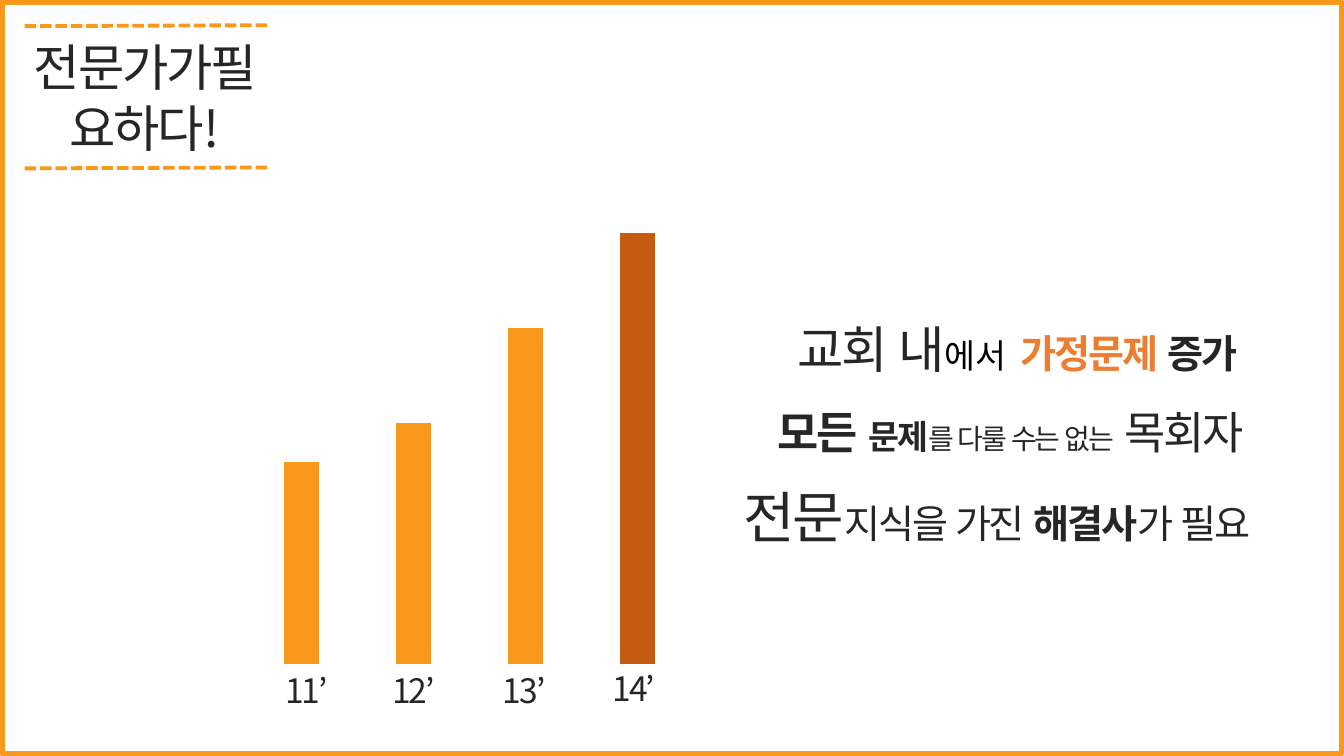
from lxml import etree
from pptx import Presentation
from pptx.chart.data import CategoryChartData
from pptx.dml.color import RGBColor
from pptx.enum.chart import XL_CHART_TYPE
from pptx.enum.dml import MSO_LINE
from pptx.enum.lang import MSO_LANGUAGE_ID
from pptx.enum.shapes import MSO_CONNECTOR, MSO_SHAPE
from pptx.enum.text import MSO_ANCHOR, MSO_AUTO_SIZE, PP_ALIGN
from pptx.oxml import parse_xml
from pptx.oxml.ns import qn
from pptx.util import Pt

COLUMNS = XL_CHART_TYPE.COLUMN_CLUSTERED
DASH = MSO_LINE.SQUARE_DOT
KOREAN = MSO_LANGUAGE_ID.KOREAN
STRAIGHT = MSO_CONNECTOR.STRAIGHT
RECTANGLE = MSO_SHAPE.RECTANGLE
TOP = MSO_ANCHOR.TOP
GROW = MSO_AUTO_SIZE.SHAPE_TO_FIT_TEXT
CENTER = PP_ALIGN.CENTER

FONT = "Noto Sans CJK KR"
COLORS = {
    "orange": "F8981D",
    "rust": "C55A11",
    "accent": "ED7D31",
    "ink": "262626",
    "black": "000000",
}


def color(name):
    return RGBColor.from_string(COLORS[name])


def write_centered(box, spans):
    """Fill box with one centred line of (text, size, bold, colour, spacing) spans."""
    frame = box.text_frame
    frame.word_wrap = True
    frame.auto_size = GROW
    frame.vertical_anchor = TOP
    para = frame.paragraphs[0]
    para.alignment = CENTER
    para.line_spacing = 1.0
    for text, size, bold, ink, spacing in spans:
        span = para.add_run()
        span.text = text
        span.font.name = FONT
        span.font.size = Pt(size)
        span.font.bold = bold
        span.font.color.rgb = color(ink)
        span.font.language_id = KOREAN
        properties = span.font._element
        properties.set("spc", str(spacing))
        etree.SubElement(properties, qn("a:ea")).set("typeface", FONT)


deck = Presentation()
deck.slide_width, deck.slide_height = Pt(960), Pt(540)
page = deck.slides.add_slide(deck.slide_layouts[5])

# Frame and dashed title rules
border = page.shapes.add_shape(RECTANGLE, Pt(1.5), Pt(1.5), Pt(957), Pt(537))
border.shadow.inherit = False
border.fill.background()
border.line.color.rgb = color("orange")
border.line.width = Pt(3.75)

for y in (18, 119.6):
    rule = page.shapes.add_connector(STRAIGHT, Pt(190.8), Pt(y), Pt(16.6), Pt(y + 0.7))
    rule.line.color.rgb = color("orange")
    rule.line.width = Pt(2.75)
    rule.line.dash_style = DASH
    etree.SubElement(rule._element.spPr, qn("a:effectLst"))

# Title
title = page.shapes.title
title.left, title.top, title.width, title.height = Pt(10.8), Pt(22.3), Pt(185), Pt(94.3)
write_centered(title, [("전문가가필요하다!", 36, False, "ink", -150)])

# Growth chart
data = CategoryChartData()
data.categories = ["1", "2", "3", "4"]
data.add_series("Series 1", (47, 56, 78, 100))
chart = page.shapes.add_chart(
    COLUMNS, Pt(168.5), Pt(125.3), Pt(333.4), Pt(356.4), data
).chart
chart.has_legend = False
chart.has_title = False
chart.font.name = FONT
chart.font.size = Pt(10)
chart.font.color.rgb = color("black")
chart.category_axis.visible = False
chart.value_axis.visible = False
chart.value_axis.has_major_gridlines = False
chart.value_axis.minimum_scale = 0
chart.value_axis.maximum_scale = 110

plot = chart.plots[0]
plot.gap_width = 219
plot.overlap = -27
plot.vary_by_categories = False
bars = plot.series[0]
bars.format.fill.solid()
bars.format.fill.fore_color.rgb = color("orange")
last_bar = bars.points[3].format.fill
last_bar.solid()
last_bar.fore_color.rgb = color("rust")

plot_area = chart._chartSpace.chart.plotArea
for old_layout in plot_area.findall(qn("c:layout")):
    plot_area.remove(old_layout)
plot_area.insert(0, parse_xml(
    '<c:layout xmlns:c="http://schemas.openxmlformats.org/drawingml/2006/chart">'
    '<c:manualLayout><c:layoutTarget val="inner"/>'
    '<c:xMode val="edge"/><c:yMode val="edge"/>'
    '<c:x val="0.02"/><c:y val="0.03"/><c:w val="0.96"/><c:h val="0.95"/>'
    '</c:manualLayout></c:layout>'
))

# Year labels
for year, left, top in (
    ("11’", 190.8, 475.2),
    ("12’", 267.1, 475.2),
    ("13’", 346.3, 475.2),
    ("14’", 424.8, 473.8),
):
    label = page.shapes.add_textbox(Pt(left), Pt(top), Pt(56.2), Pt(36))
    write_centered(label, [(year, 24, False, "ink", -150)])

# Messages
messages = [
    ((542.2, 223.9, 369.4, 51.1), [
        ("교회 내", 36, False, "ink", -150),
        ("에서", 24, False, "black", 0),
        (" ", 36, False, "ink", -150),
        ("가정문제", 28, True, "accent", -150),
        (" ", 24, False, "ink", -150),
        ("증가", 28, True, "ink", -150),
    ]),
    ((513.4, 285.8, 417.6, 46.1), [
        ("모든 ", 32, True, "ink", -150),
        ("문제", 24, True, "ink", -150),
        ("를 다룰 수는 없는", 20, False, "ink", -150),
        (" ", 28, False, "ink", -150),
        ("목회자", 32, False, "ink", -150),
    ]),
    ((503.3, 341.3, 417.6, 55.4), [
        ("전문", 40, False, "ink", -150),
        ("지식을 가진 ", 28, False, "ink", -150),
        ("해결사", 28, True, "ink", -150),
        ("가 필요", 28, False, "ink", -150),
    ]),
]
for place, spans in messages:
    message = page.shapes.add_textbox(*(Pt(length) for length in place))
    write_centered(message, spans)

deck.save("out.pptx")
